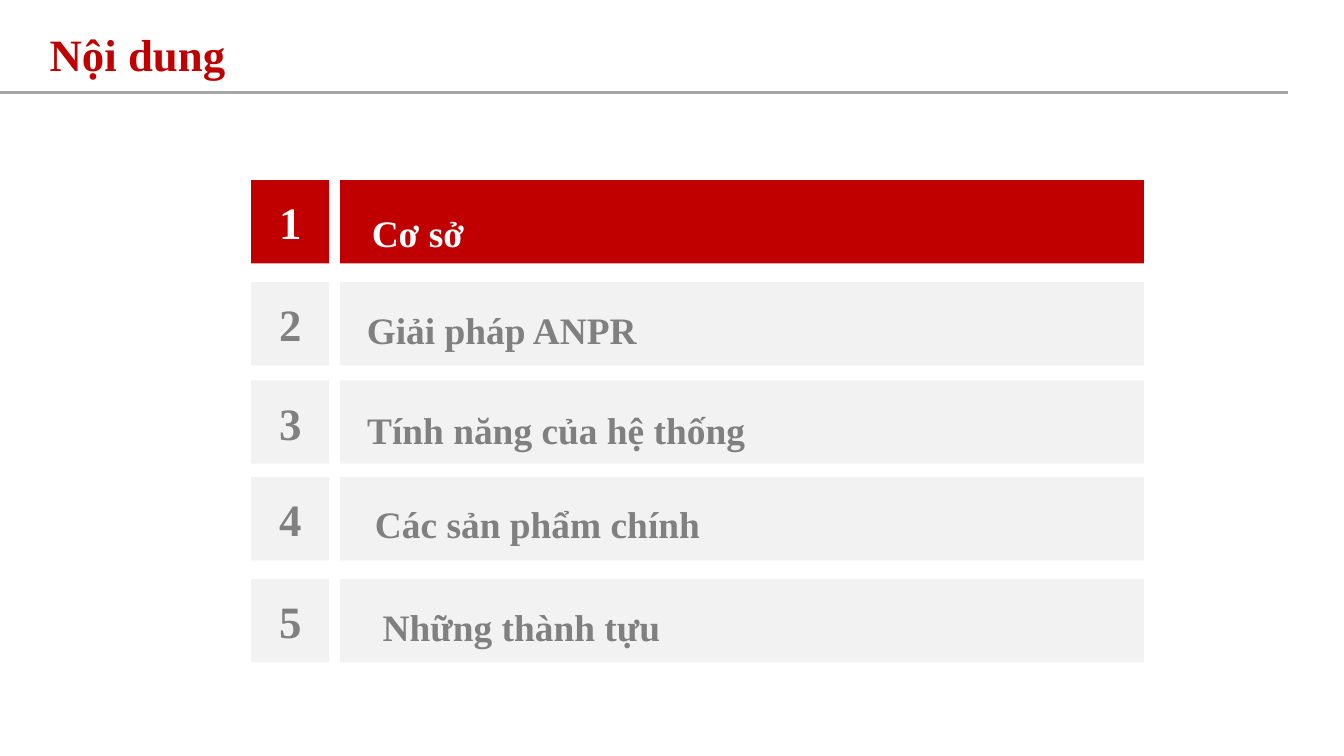
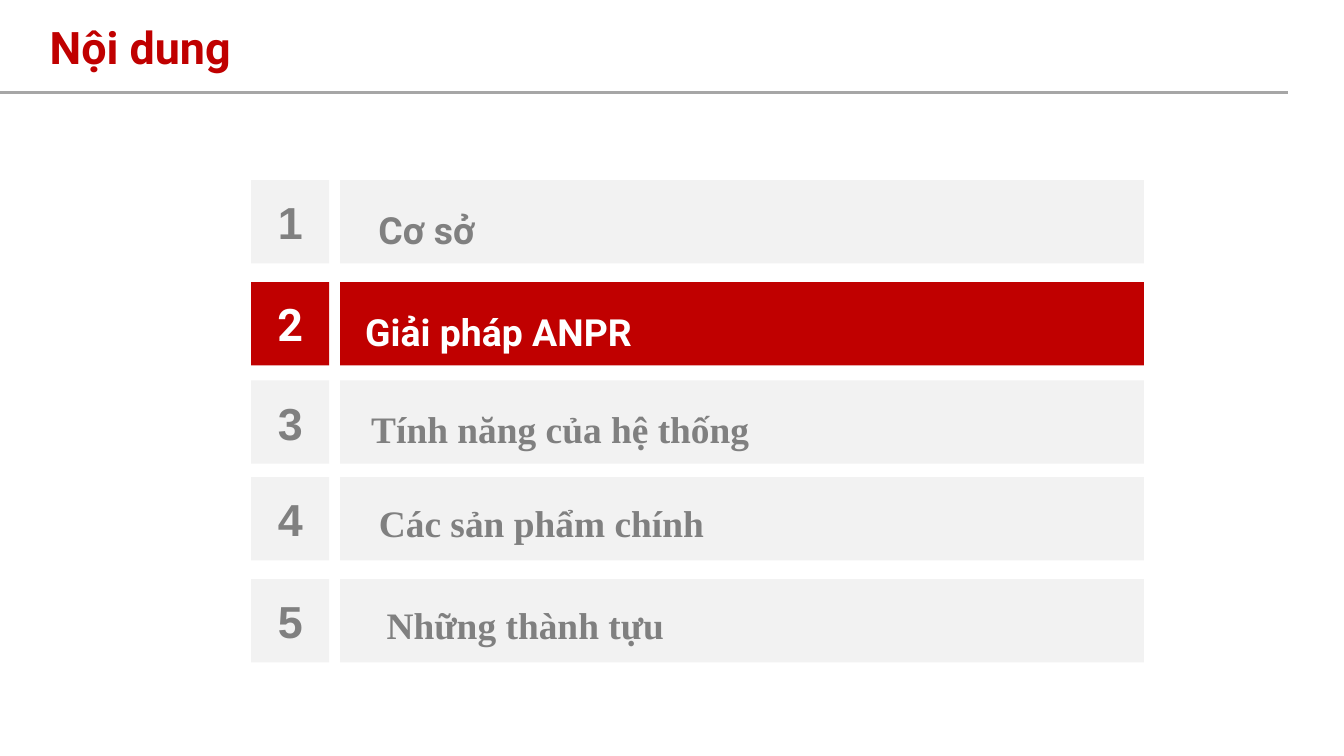
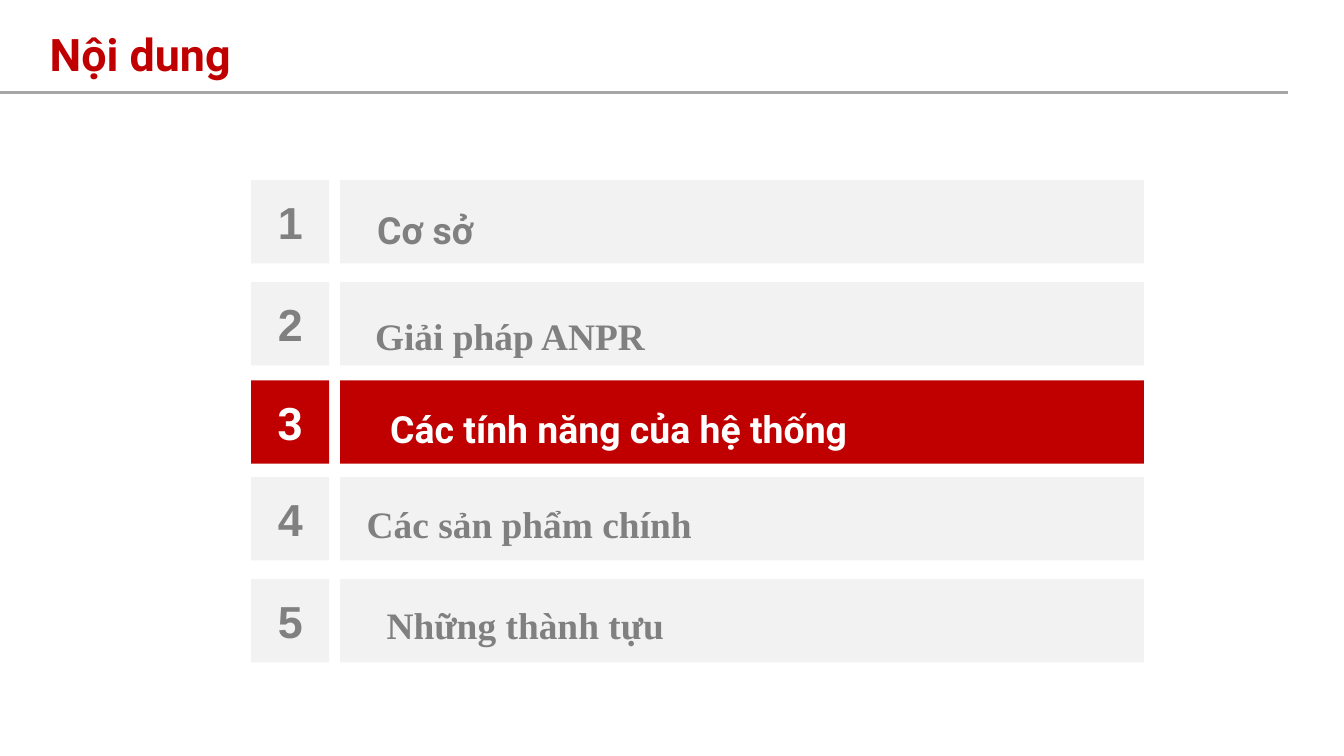
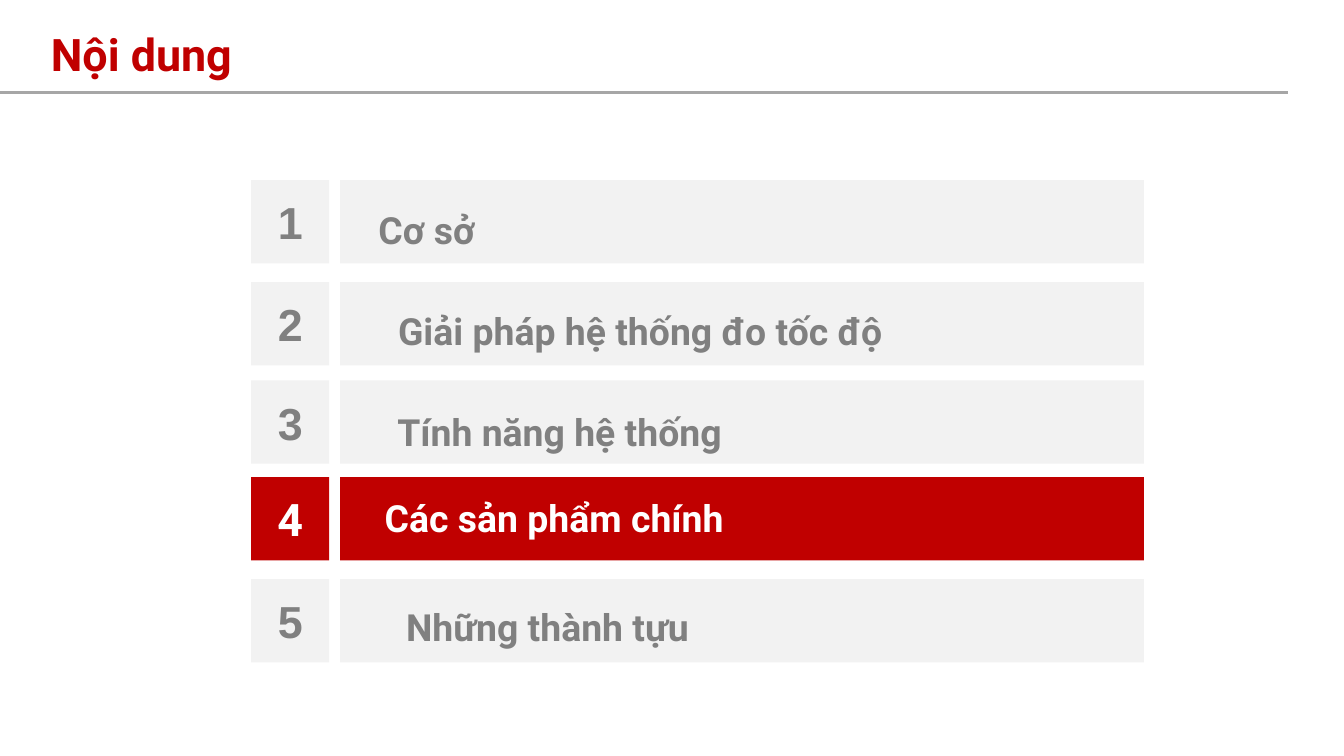
from lxml import etree
from pptx import Presentation
from pptx.dml.color import RGBColor
from pptx.enum import shapes, text
from pptx.oxml.ns import qn
from pptx.util import Pt

RED = RGBColor(0xC0, 0x00, 0x00)
PALE = RGBColor(0xF2, 0xF2, 0xF2)
GREY = RGBColor(0x80, 0x80, 0x80)
RULE_GREY = RGBColor(0xA6, 0xA6, 0xA6)
WHITE = RGBColor(0xFF, 0xFF, 0xFF)

SERIF, ROBOTO, ARIAL = "Times New Roman", "Roboto", "Arial"

ROW_TOPS = [96.5, 151.2, 203.8, 255.6, 310.3]
ROW_HEIGHT = 44.6
NUMBER_LEFT, NUMBER_WIDTH = 134.6, 41.8
BAR_LEFT, BAR_WIDTH = 182.2, 430.6

# Each agenda: title left and top, title font, active number font, other number font,
# then one (label, font, left, top, width) per row. The agenda's place sets its active row.
AGENDAS = [
    (19.4, 13.7, SERIF, SERIF, SERIF, [
        ("Cơ sở", SERIF, 191.5, 103, 64.8),
        ("Giải pháp ANPR", SERIF, 188.6, 154.8, 160.6),
        ("Tính năng của hệ thống", SERIF, 188.6, 208.8, 218.9),
        ("Các sản phẩm chính", SERIF, 193, 259.2, 190.1),
        ("Những thành tựu", SERIF, 197.3, 313.9, 164.2),
    ]),
    (19.4, 10.1, ROBOTO, ROBOTO, ARIAL, [
        ("Cơ sở", ROBOTO, 195.1, 101.5, 67),
        ("Giải pháp ANPR", ROBOTO, 181.4, 156.2, 171.4),
        ("Tính năng của hệ thống", SERIF, 190.8, 208.1, 218.9),
        ("Các sản phẩm chính", SERIF, 195.1, 258.5, 190.1),
        ("Những thành tựu", SERIF, 199.4, 313.2, 164.2),
    ]),
    (19.4, 13.7, ROBOTO, ROBOTO, ARIAL, [
        ("Cơ sở", ROBOTO, 194.4, 101.5, 67),
        ("Giải pháp ANPR", SERIF, 193, 158.4, 160.6),
        ("Các tính năng của hệ thống", ROBOTO, 194.4, 208.1, 274.3),
        ("Các sản phẩm chính", SERIF, 188.6, 259.2, 190.1),
        ("Những thành tựu", SERIF, 199.4, 313.2, 164.2),
    ]),
    (20, 13.7, ROBOTO, ROBOTO, ARIAL, [
        ("Cơ sở", ROBOTO, 195.1, 101.5, 67),
        ("Giải pháp hệ thống đo tốc độ", ROBOTO, 196.6, 155.5, 293),
        ("Tính năng hệ thống", ROBOTO, 199.4, 209.5, 200.9),
        ("Các sản phẩm chính", ROBOTO, 195.8, 255.6, 202.3),
        ("Những thành tựu", ROBOTO, 203, 313.9, 180.7),
    ]),
]


def write(shape, words, font, size, color, align):
    """Set one bold paragraph in a shape and return it."""
    shape.text_frame.text = words
    para = shape.text_frame.paragraphs[0]
    para.alignment = align
    span = para.runs[0]
    span.font.name = font
    span.font.size = Pt(size)
    span.font.bold = True
    span.font.color.rgb = color
    return para


def add_block(page, left, top, width, fill):
    block = page.shapes.add_shape(shapes.MSO_SHAPE.RECTANGLE,
                                  Pt(left), Pt(top), Pt(width), Pt(ROW_HEIGHT))
    block.shadow.inherit = False
    block.fill.solid()
    block.fill.fore_color.rgb = fill
    block.line.fill.background()
    return block


deck = Presentation()
deck.slide_width, deck.slide_height = Pt(720), Pt(405)
layout = deck.slide_layouts.get_by_name("Title Only")
pages = [deck.slides.add_slide(layout) for agenda in AGENDAS]

# The rule under the title is drawn once and moved to the shared layout.
rule = pages[0].shapes.add_connector(shapes.MSO_CONNECTOR.STRAIGHT,
                                     Pt(0), Pt(49.7), Pt(689.8), Pt(49.7))
rule.line.color.rgb = RULE_GREY
rule.line.width = Pt(1.5)
etree.SubElement(rule.element.spPr, qn("a:effectLst"))
layout.shapes.element.append(rule.element)

for active, (page, agenda) in enumerate(zip(pages, AGENDAS)):
    title_left, title_top, title_font, active_font, number_font, rows = agenda

    title = page.shapes.title
    title.left, title.top = Pt(title_left), Pt(title_top)
    title.width, title.height = Pt(325.4), Pt(30.2)
    title.text_frame.vertical_anchor = text.MSO_ANCHOR.MIDDLE
    title.text_frame.auto_size = text.MSO_AUTO_SIZE.NONE
    write(title, "Nội dung", title_font, 24, RED, text.PP_ALIGN.LEFT)

    for index, (label, font, left, top, width) in enumerate(rows):
        is_active = index == active
        fill, ink = (RED, WHITE) if is_active else (PALE, GREY)

        number = add_block(page, NUMBER_LEFT, ROW_TOPS[index], NUMBER_WIDTH, fill)
        number.text_frame.vertical_anchor = text.MSO_ANCHOR.MIDDLE
        write(number, str(index + 1), active_font if is_active else number_font,
              24, ink, text.PP_ALIGN.CENTER)
        add_block(page, BAR_LEFT, ROW_TOPS[index], BAR_WIDTH, fill)

        box = page.shapes.add_textbox(Pt(left), Pt(top), Pt(width),
                                      Pt(34.6 if index == 0 else 37.4))
        box.text_frame.word_wrap = False
        box.text_frame.auto_size = text.MSO_AUTO_SIZE.SHAPE_TO_FIT_TEXT
        para = write(box, label, font, 20, ink, text.PP_ALIGN.CENTER)
        para.line_spacing = 1.25

deck.save("out.pptx")
